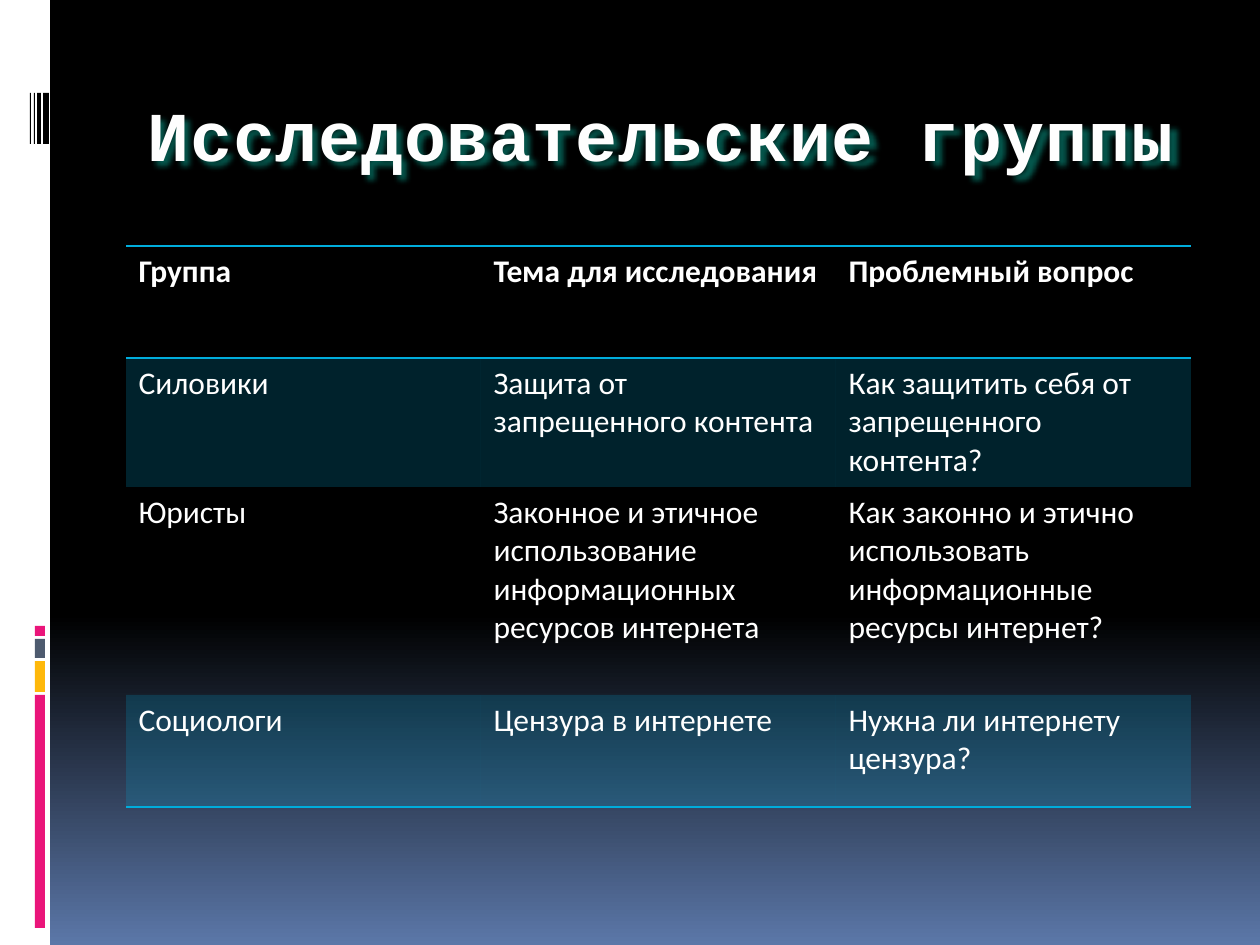
import copy
import pptx
import pptx.dml.color
import pptx.enum.text
import pptx.enum.shapes
import pptx.oxml
import pptx.oxml.ns
import pptx.util

RGBColor = pptx.dml.color.RGBColor
qn = pptx.oxml.ns.qn
NS = pptx.oxml.ns.nsdecls("a")

BLACK = RGBColor(0x00, 0x00, 0x00)
WHITE = RGBColor(0xFF, 0xFF, 0xFF)
TITLE_WHITE = RGBColor(0xFE, 0xFE, 0xFE)
DUSK = RGBColor(0x5B, 0x77, 0xA8)
PINK = RGBColor(0xEA, 0x15, 0x7A)
AMBER = RGBColor(0xFE, 0xB8, 0x0A)
SLATE = RGBColor(0x4E, 0x5B, 0x6F)
CYAN = RGBColor(0x00, 0xAD, 0xDC)
TEAL = RGBColor(0x0A, 0xB0, 0x9B)

PLAIN_TABLE = "{2D5ABB26-0587-4C30-8999-92F81FD0307C}"
TITLE = "Исследовательские группы"
GROUPS = [
    ["Группа", "Тема для исследования", "Проблемный вопрос"],
    ["Силовики", "Защита от запрещенного контента",
     "Как защитить себя от запрещенного контента?"],
    ["Юристы", "Законное и этичное использование информационных ресурсов интернета",
     "Как законно и этично использовать информационные ресурсы интернет?"],
    ["Социологи", "Цензура в интернете", "Нужна ли интернету цензура?"],
]
ROW_HEIGHTS = [112, 129, 208, 112]
STRIPES = [(695, 233, PINK), (661, 31, AMBER), (639, 19, SLATE), (626, 10, PINK)]
BARCODE = [(43, 6), (37, 4), (34, 1), (30, 1)]


def px(length):
    return pptx.util.Emu(round(length * 914400 / 126))


class SlideBuilder:
    title_font = "Courier New"
    body_font = "Calibri"

    def __init__(self, deck):
        self.page = deck.slides.add_slide(deck.slide_layouts[5])

    def background(self, stops):
        fill = self.page.background.fill
        fill.gradient()
        fill.gradient_angle = 270
        stop_list = self.page.element.find(".//" + qn("a:gsLst"))
        stop_list.insert(1, copy.deepcopy(stop_list[0]))
        for stop, (position, color) in zip(fill.gradient_stops, stops):
            stop.position = position
            stop.color.rgb = color

    def rectangle(self, left, top, width, height, color):
        box = self.page.shapes.add_shape(
            pptx.enum.shapes.MSO_SHAPE.RECTANGLE, px(left), px(top), px(width), px(height))
        box.shadow.inherit = False
        box.fill.solid()
        box.fill.fore_color.rgb = color
        box.line.fill.background()

    def style(self, span, font, size, color, bold):
        span.font.name = font
        span.font.size = pptx.util.Pt(size)
        span.font.color.rgb = color
        span.font.bold = bold

    def title(self, text, left, top, width, height):
        box = self.page.shapes.title
        box.left, box.top, box.width, box.height = map(px, (left, top, width, height))
        frame = box.text_frame
        frame.text = text
        frame.word_wrap = True
        frame.auto_size = pptx.enum.text.MSO_AUTO_SIZE.NONE
        frame.vertical_anchor = pptx.enum.text.MSO_ANCHOR.MIDDLE
        para = frame.paragraphs[0]
        para.alignment = pptx.enum.text.PP_ALIGN.CENTER
        span = para.runs[0]
        self.style(span, self.title_font, 40, TITLE_WHITE, True)
        properties = span.font._element
        properties.set("spc", "50")
        properties.insert(0, pptx.oxml.parse_xml(
            f'<a:ln {NS} w="12700"><a:solidFill><a:srgbClr val="{TEAL}"/></a:solidFill></a:ln>'))
        box.element.spPr.append(pptx.oxml.parse_xml(
            f'<a:effectLst {NS}><a:outerShdw blurRad="38100" dist="38100" dir="2700000">'
            f'<a:srgbClr val="{TEAL}"><a:alpha val="50000"/></a:srgbClr>'
            '</a:outerShdw></a:effectLst>'))

    def border(self, cell, side):
        cell._tc.get_or_add_tcPr().append(pptx.oxml.parse_xml(
            f'<a:{side} {NS} w="12700"><a:solidFill><a:srgbClr val="{CYAN}"/>'
            f'</a:solidFill></a:{side}>'))

    def tint(self, cell):
        cell.fill.solid()
        cell.fill.fore_color.rgb = CYAN
        color = cell._tc.tcPr.find(qn("a:solidFill"))[0]
        color.append(pptx.oxml.parse_xml(f'<a:alpha {NS} val="20000"/>'))

    def table(self, rows, left, top, width, heights):
        frame = self.page.shapes.add_table(
            len(rows), len(rows[0]), px(left), px(top), px(width), px(sum(heights)))
        table = frame.table
        table.first_row = table.horz_banding = False
        table._tbl.tblPr.find(qn("a:tableStyleId")).text = PLAIN_TABLE
        last = len(rows) - 1
        for index, (texts, height) in enumerate(zip(rows, heights)):
            table.rows[index].height = px(height)
            for column, text in enumerate(texts):
                cell = table.cell(index, column)
                cell.text_frame.text = text
                span = cell.text_frame.paragraphs[0].runs[0]
                self.style(span, self.body_font, 18, WHITE, index == 0)
                if index == 0:
                    self.border(cell, "lnT")
                if index in (0, last):
                    self.border(cell, "lnB")
                if index % 2:
                    self.tint(cell)
                else:
                    cell.fill.background()


def main():
    deck = pptx.Presentation()
    deck.slide_width, deck.slide_height = px(1260), px(945)
    slide = SlideBuilder(deck)
    slide.background([(0, BLACK), (0.65, BLACK), (1, DUSK)])
    slide.rectangle(0, 0, 50, 945, WHITE)
    for top, height, color in STRIPES:
        slide.rectangle(35, top, 10, height, color)
    for left, width in BARCODE:
        slide.rectangle(left, 93, width, 51, BLACK)
    slide.title(TITLE, 126, 71, 1071, 126)
    slide.table(GROUPS, 126, 246, 1065, ROW_HEIGHTS)
    deck.save("out.pptx")


if __name__ == "__main__":
    main()
